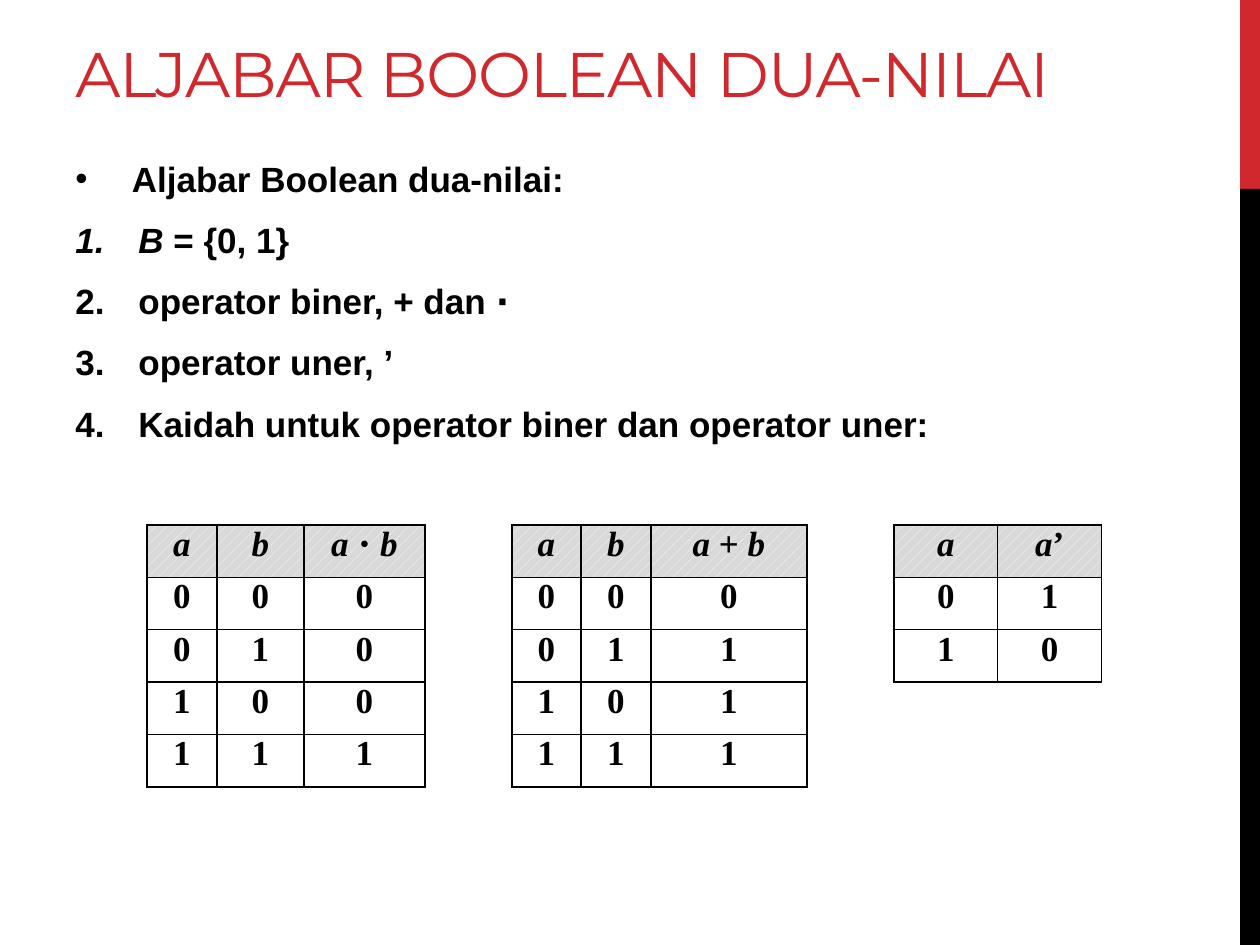
from dataclasses import dataclass

import lxml.etree
import pptx
import pptx.dml.color
import pptx.enum.dml
import pptx.enum.shapes
import pptx.enum.text
import pptx.oxml.ns
import pptx.util

EMU_PER_PX = 914400 / 126
COLORS = {"red": "D1282E", "black": "000000", "white": "FFFFFF", "header": "D9D9D9"}
NO_TABLE_STYLE = "{2D5ABB26-0587-4C30-8999-92F81FD0307C}"
TITLE_FONT = {"name": "Montserrat", "size": pptx.util.Pt(36)}
BODY_FONT = {"name": "Arial", "size": pptx.util.Pt(20), "bold": True}
TABLE_FONT = {"name": "Times New Roman", "size": pptx.util.Pt(20), "bold": True}

Run = tuple[str, bool]  # text, italic


@dataclass(frozen=True)
class Box:
    left: int
    top: int
    width: int
    height: int


@dataclass(frozen=True)
class Bar:
    box: Box
    color: str


@dataclass(frozen=True)
class ListItem:
    runs: list[Run]
    indent: int
    numbered: bool = True


@dataclass(frozen=True)
class TruthTable:
    first_column: int
    header: list[list[Run]]
    rows: list[str]


BARS = [Bar(Box(1240, 0, 20, 189), "red"), Bar(Box(1240, 189, 20, 756), "black")]
TITLE_BOX = Box(63, 21, 1134, 95)
BODY_BOX = Box(63, 147, 1050, 697)
TABLE_BOX = Box(147, 525, 955, 262)
COLUMN_WIDTHS = [70, 87, 121, 87, 69, 70, 156, 87, 104, 104]
ROW_COUNT = 5

ITEMS = [
    ListItem([(" Aljabar Boolean dua-nilai:", False)], 48, numbered=False),
    ListItem([("B", True), (" = {0, 1}", False)], 63),
    ListItem([("operator biner, + dan ⋅", False)], 63),
    ListItem([("operator uner, ’", False)], 63),
    ListItem([("Kaidah untuk operator biner dan operator uner:", False)], 63),
]

A, B = [("a", True)], [("b", True)]
TRUTH_TABLES = [
    TruthTable(0, [A, B, [("a ", True), ("⋅", False), (" b", True)]],
               ["000", "010", "100", "111"]),
    TruthTable(4, [A, B, [("a", True), (" + ", False), ("b", True)]],
               ["000", "011", "101", "111"]),
    TruthTable(8, [A, [("a", True), ("’", False)]], ["01", "10"]),
]


def px(value: int) -> int:
    return round(value * EMU_PER_PX)


def place(box: Box) -> tuple[int, ...]:
    return tuple(px(value) for value in (box.left, box.top, box.width, box.height))


def rgb(color: str) -> pptx.dml.color.RGBColor:
    return pptx.dml.color.RGBColor.from_string(COLORS[color])


def set_attributes(target: object, values: dict) -> None:
    for name, value in values.items():
        setattr(target, name, value)


def add_element(parent, tag: str, **attributes: str):
    element = lxml.etree.SubElement(parent, pptx.oxml.ns.qn(tag))
    for name, value in attributes.items():
        element.set(name, value)
    return element


def add_runs(paragraph, runs: list[Run], font: dict, color: str = "black") -> None:
    for text, italic in runs:
        run = paragraph.add_run()
        run.text = text
        set_attributes(run.font, {**font, "italic": italic})
        run.font.color.rgb = rgb(color)


def draw_bar(slide, bar: Bar) -> None:
    shape = slide.shapes.add_shape(pptx.enum.shapes.MSO_SHAPE.RECTANGLE, *place(bar.box))
    shape.shadow.inherit = False
    shape.fill.solid()
    shape.fill.fore_color.rgb = rgb(bar.color)
    shape.line.fill.background()


def draw_title(slide, text: str) -> None:
    frame = slide.shapes.add_textbox(*place(TITLE_BOX)).text_frame
    set_attributes(frame, {"word_wrap": True,
                           "vertical_anchor": pptx.enum.text.MSO_ANCHOR.BOTTOM})
    paragraph = frame.paragraphs[0]
    add_runs(paragraph, [(text, False)], TITLE_FONT, "red")
    paragraph.runs[0]._r.get_or_add_rPr().set("spc", "-60")


def draw_list(slide, items: list[ListItem]) -> None:
    frame = slide.shapes.add_textbox(*place(BODY_BOX)).text_frame
    set_attributes(frame, {"word_wrap": True, "margin_top": px(10)})
    for index, item in enumerate(items):
        paragraph = frame.add_paragraph() if index else frame.paragraphs[0]
        set_attributes(paragraph, {"space_before": pptx.util.Pt(5 if index else 0),
                                   "space_after": pptx.util.Pt(6)})
        properties = paragraph._p.get_or_add_pPr()
        properties.set("marL", str(px(item.indent)))
        properties.set("indent", str(-px(item.indent)))
        if item.numbered:
            add_element(properties, "a:buFont", typeface="+mj-lt")
            add_element(properties, "a:buAutoNum", type="arabicPeriod")
        else:
            add_element(properties, "a:buFont", typeface="Arial")
            add_element(properties, "a:buChar", char="•")
        add_runs(paragraph, item.runs, BODY_FONT)


def draw_borders(cell) -> None:
    properties = cell._tc.get_or_add_tcPr()
    for side in ("L", "R", "T", "B"):
        line = add_element(properties, f"a:ln{side}", w=str(pptx.util.Pt(1)))
        fill = add_element(line, "a:solidFill")
        add_element(fill, "a:srgbClr", val=COLORS["black"])


def fill_cell(cell, runs: list[Run], is_header: bool) -> None:
    draw_borders(cell)
    if is_header:
        cell.fill.patterned()
        cell.fill.pattern = pptx.enum.dml.MSO_PATTERN.PERCENT_20
        cell.fill.fore_color.rgb = rgb("white")
        cell.fill.back_color.rgb = rgb("header")
    else:
        cell.fill.background()
    set_attributes(cell, {"margin_left": px(9), "margin_right": px(9),
                          "margin_top": 0, "margin_bottom": 0})
    paragraph = cell.text_frame.paragraphs[0]
    paragraph.alignment = pptx.enum.text.PP_ALIGN.CENTER
    add_runs(paragraph, runs, TABLE_FONT)


def draw_truth_tables(slide, truth_tables: list[TruthTable]) -> None:
    """Draw all truth tables in one grid, parted by empty columns."""
    table = slide.shapes.add_table(ROW_COUNT, len(COLUMN_WIDTHS), *place(TABLE_BOX)).table
    set_attributes(table, {"first_row": False, "horz_banding": False})
    table._tbl.tblPr.find(pptx.oxml.ns.qn("a:tableStyleId")).text = NO_TABLE_STYLE
    for column, width in zip(table.columns, COLUMN_WIDTHS):
        column.width = px(width)
    for cell in table.iter_cells():
        cell.fill.background()
    for truth_table in truth_tables:
        values = [[[(digit, False)] for digit in row] for row in truth_table.rows]
        for row_index, row in enumerate([truth_table.header, *values]):
            for column_index, runs in enumerate(row, truth_table.first_column):
                cell = table.cell(row_index, column_index)
                properties = cell._tc.get_or_add_tcPr()
                for child in list(properties):
                    properties.remove(child)
                fill_cell(cell, runs, row_index == 0)


def main() -> None:
    presentation = pptx.Presentation()
    set_attributes(presentation, {"slide_width": px(1260), "slide_height": px(945)})
    slide = presentation.slides.add_slide(presentation.slide_layouts[6])
    for bar in BARS:
        draw_bar(slide, bar)
    draw_title(slide, "ALJABAR BOOLEAN DUA-NILAI")
    draw_list(slide, ITEMS)
    draw_truth_tables(slide, TRUTH_TABLES)
    presentation.save("out.pptx")


if __name__ == "__main__":
    main()
